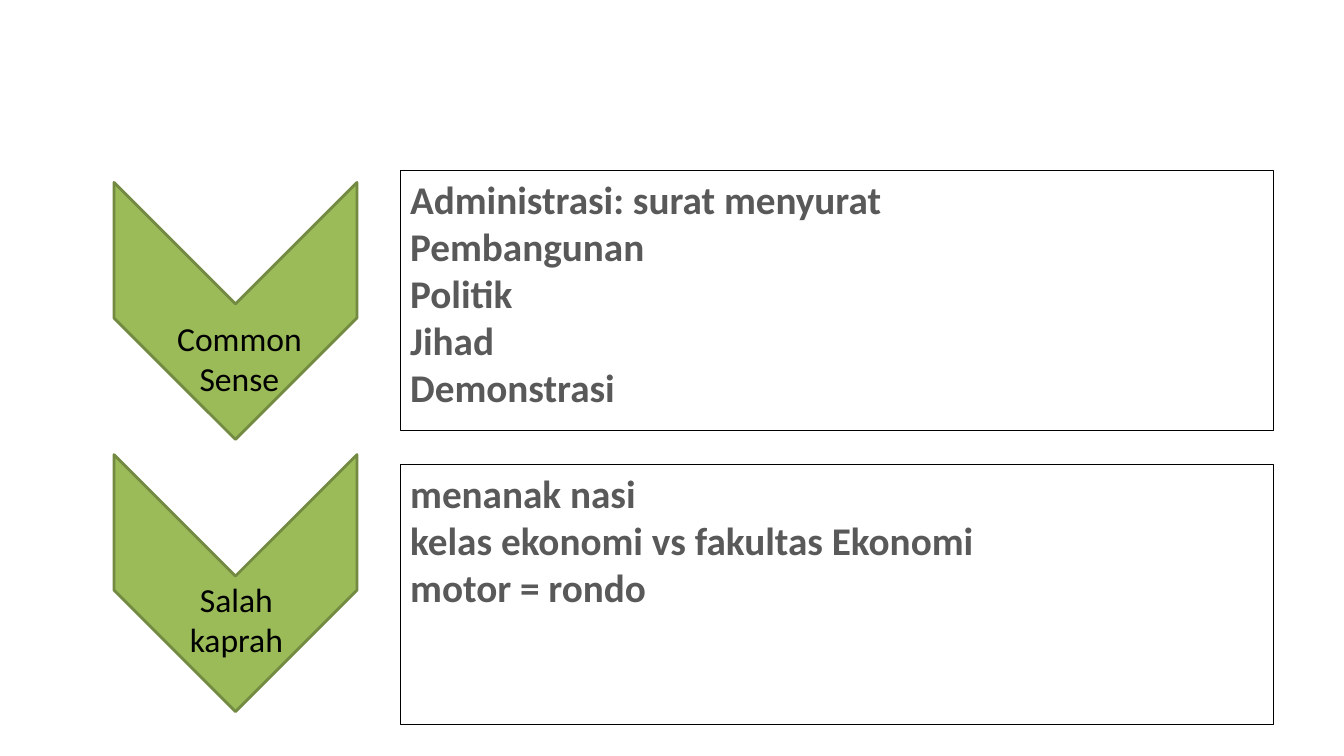
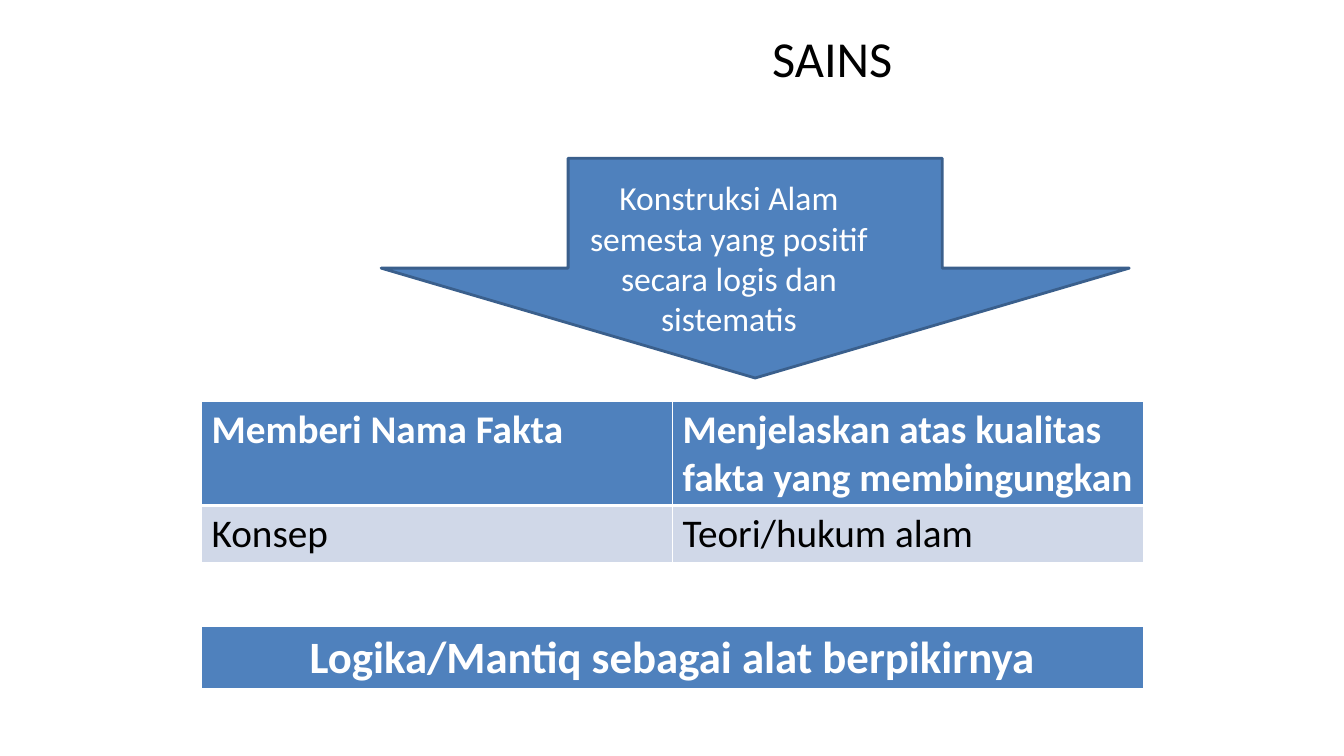
from lxml import etree
from pptx import Presentation
from pptx.dml.color import RGBColor
from pptx.enum.shapes import MSO_SHAPE
from pptx.enum.text import MSO_ANCHOR, MSO_AUTO_SIZE, PP_ALIGN
from pptx.oxml.ns import qn
from pptx.util import Emu, Pt

RECT, CHEVRON, ARROW = MSO_SHAPE.RECTANGLE, MSO_SHAPE.CHEVRON, MSO_SHAPE.DOWN_ARROW
LEFT, CENTER, TOP = PP_ALIGN.LEFT, PP_ALIGN.CENTER, MSO_ANCHOR.TOP
GROW = MSO_AUTO_SIZE.SHAPE_TO_FIT_TEXT

FONT = "Calibri"
BLACK, WHITE, GRAY = "000000", "FFFFFF", "595959"
GREEN, MOSS = "9BBB59", "738A42"
BLUE, NAVY, PALE = "4F81BD", "3A5F8C", "D0D8E8"
PX = 9144  # 100 px to the inch

# panel top, chevron top, label place, label, lines
GROUPS = [
    (169, 188, (156, 310, 163, 91), "Common Sense",
     ["Administrasi: surat menyurat", "Pembangunan", "Politik", "Jihad", "Demonstrasi"]),
    (461, 458, (153, 569, 163, 91), "Salah kaprah",
     ["menanak nasi", "kelas ekonomi vs fakultas Ekonomi", "motor = rondo"]),
]
TITLE = "SAINS"
CLAIM = "Konstruksi Alam semesta yang positif secara logis dan sistematis"
FACTS = [
    ["Memberi Nama Fakta", "Menjelaskan atas kualitas fakta yang membingungkan"],
    ["Konsep", "Teori/hukum alam"],
]
TOOL = [["Logika/Mantiq sebagai alat berpikirnya"]]
GRID_X, GRID_W, ROW_H = 200, 934, 42


def rgb(code):
    return RGBColor.from_string(code)


def px(*nums):
    return [Emu(n * PX) for n in nums]


def write(frame, text, size, color, bold=False, align=LEFT):
    frame.text = text
    for para in frame.paragraphs:
        para.alignment = align
        for run in para.runs:
            font = run.font
            font.name, font.size, font.bold = FONT, Pt(size), bold
            font.color.rgb = rgb(color)


def shape(slide, kind, place, fill, line, width):
    item = slide.shapes.add_shape(kind, *px(*place))
    item.shadow.inherit = False
    if fill:
        item.fill.solid()
        item.fill.fore_color.rgb = rgb(fill)
    else:
        item.fill.background()
    item.line.color.rgb = rgb(line)
    item.line.width = Pt(width)
    return item


def label(slide, place, text, size, color, align=CENTER):
    frame = slide.shapes.add_textbox(*px(*place)).text_frame
    frame.word_wrap = True
    frame.auto_size = GROW
    write(frame, text, size, color, align=align)


def edge(cell, top, bottom):
    """Give the cell white borders, with top and bottom widths in points."""
    props = cell._tc.get_or_add_tcPr()
    for side, width in (("L", 1), ("R", 1), ("T", top), ("B", bottom)):
        line = etree.SubElement(props, qn("a:ln" + side), w=str(Pt(width)))
        fill = etree.SubElement(line, qn("a:solidFill"))
        etree.SubElement(fill, qn("a:srgbClr"), val=WHITE)


def grid(slide, top, rows, size, align=LEFT):
    """Add a table whose first row is a blue header."""
    count = len(rows[0])
    place = px(GRID_X, top, GRID_W, ROW_H * len(rows))
    table = slide.shapes.add_table(len(rows), count, *place).table
    for col in table.columns:
        col.width = Emu(GRID_W * PX // count)
    for r, row in enumerate(rows):
        head = r == 0
        for c, text in enumerate(row):
            cell = table.cell(r, c)
            edge(cell, 1 if head else 3, 3 if head else 1)
            cell.fill.solid()
            cell.fill.fore_color.rgb = rgb(BLUE if head else PALE)
            write(cell.text_frame, text, size, WHITE if head else BLACK, head, align)


def sense(slide):
    for top, tip, place, name, lines in GROUPS:
        panel = shape(slide, RECT, (397, top, 866, 258), None, BLACK, 0.75)
        panel.text_frame.word_wrap = True
        panel.text_frame.vertical_anchor = TOP
        write(panel.text_frame, "\n".join(lines), 28, GRAY, True)
        shape(slide, CHEVRON, (106, tip, 255, 241), GREEN, MOSS, 2).rotation = 90
        label(slide, place, name, 24, BLACK)


def science(slide):
    shape(slide, ARROW, (378, 157, 742, 218), BLUE, NAVY, 2)
    grid(slide, 398, FACTS, 28)
    label(slide, (573, 171, 300, 172), CLAIM, 24, WHITE)
    grid(slide, 621, TOOL, 32, CENTER)
    label(slide, (756, 22, 382, 71), TITLE, 36, BLACK, LEFT)


def main():
    deck = Presentation()
    deck.slide_width, deck.slide_height = px(1333, 750)
    for build in (sense, science):
        build(deck.slides.add_slide(deck.slide_layouts[6]))
    deck.save("out.pptx")


if __name__ == "__main__":
    main()
